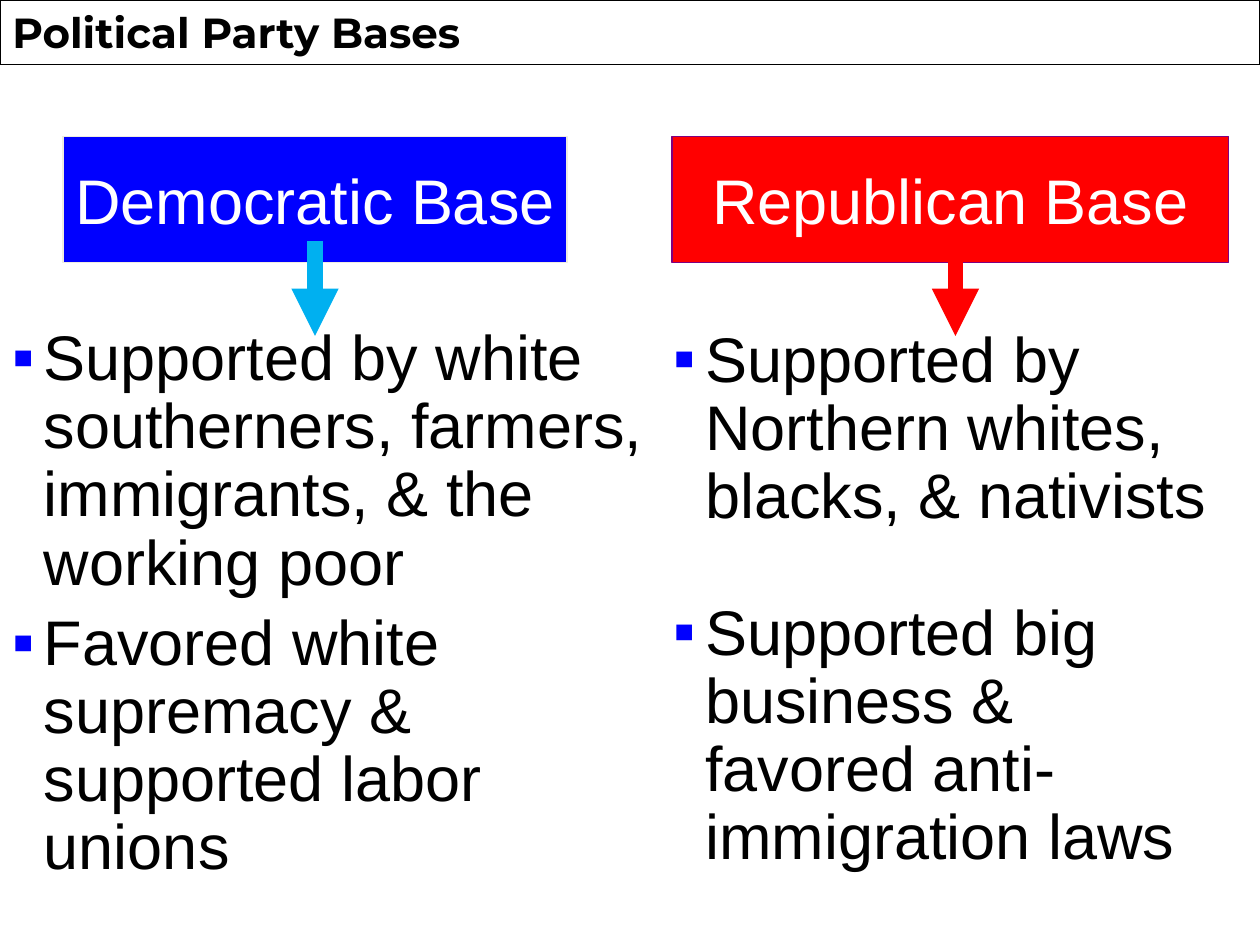
"""Build the slide that compares the bases of two political parties."""
from lxml import etree
from pptx import Presentation
from pptx.dml.color import RGBColor
from pptx.enum.shapes import MSO_CONNECTOR, MSO_SHAPE
from pptx.enum.text import MSO_ANCHOR, MSO_AUTO_SIZE, PP_ALIGN
from pptx.oxml.ns import qn
from pptx.util import Pt

RECT = MSO_SHAPE.RECTANGLE
LINE = MSO_CONNECTOR.STRAIGHT
TOP, MID = MSO_ANCHOR.TOP, MSO_ANCHOR.MIDDLE
LEFT, CENTER = PP_ALIGN.LEFT, PP_ALIGN.CENTER
GROW = MSO_AUTO_SIZE.SHAPE_TO_FIT_TEXT
PX = 9525
THEME = {
    "white": "FFFFFF", "black": "000000", "blue": "0000FF", "red": "FF0000",
    "cream": "EEECE1", "purple": "800080", "sky": "00B0F0",
    "head": {"name": "Montserrat", "size": Pt(24), "bold": True},
    "body": {"name": "Arial", "size": Pt(36)},
}


def write(para, text, style, color, form):
    run = para.add_run()
    run.text = text
    for key, val in THEME[style].items():
        setattr(run.font, key, val)
    run.font.color.rgb = RGBColor.from_string(THEME[color])
    for key, val in form.items():
        setattr(para, key, val)


deck = Presentation()
deck.slide_width, deck.slide_height = 960 * PX, 720 * PX
slide = deck.slides.add_slide(deck.slide_layouts[6])
shapes = slide.shapes

boxes = [
    ("Political Party Bases", (0, 0, 960, 49), "white", "black", "head", "black", TOP, LEFT, True),
    ("Democratic Base", (48, 104, 384, 96), "blue", "cream", "body", "white", MID, CENTER, False),
    ("Republican Base", (512, 104, 424, 96), "red", "purple", "body", "white", MID, CENTER, False),
]
for text, area, fill, edge, style, ink, anchor, align, wrap in boxes:
    box = shapes.add_shape(RECT, *(n * PX for n in area))
    box.shadow.inherit = False
    box.fill.solid()
    box.fill.fore_color.rgb = RGBColor.from_string(THEME[fill])
    box.line.color.rgb = RGBColor.from_string(THEME[edge])
    box.line.width = Pt(0.75)
    frame = box.text_frame
    frame.word_wrap = wrap
    frame.vertical_anchor = anchor
    write(frame.paragraphs[0], text, style, ink, {"alignment": align})

for x, color in ((240, "sky"), (728, "red")):
    arrow = shapes.add_connector(LINE, x * PX, 184 * PX, x * PX, 256 * PX)
    arrow.line.color.rgb = RGBColor.from_string(THEME[color])
    arrow.line.width = Pt(9)
    etree.SubElement(arrow.line._get_or_add_ln(), qn("a:tailEnd"), type="triangle")
    etree.SubElement(arrow._element.spPr, qn("a:effectLst"))

lists = [
    ((0, 244, 504, 436), [
        ("Supported by white southerners, farmers, immigrants, & the working poor", 7.2),
        ("Favored white supremacy & supported labor unions", 7.2),
    ]),
    ((504, 245, 432, 428), [
        ("Supported by Northern whites, blacks, & nativists", 7.2),
        ("Supported big business & favored anti-immigration laws", 39.4),
    ]),
]
for area, points in lists:
    frame = shapes.add_textbox(*(n * PX for n in area)).text_frame
    frame.word_wrap = True
    frame.auto_size = GROW
    for i, (text, gap) in enumerate(points):
        para = frame.add_paragraph() if i else frame.paragraphs[0]
        write(para, text, "body", "black", {"line_spacing": 0.9, "space_before": Pt(gap)})
        props = para._p.get_or_add_pPr()
        props.set("marL", str(24 * PX))
        props.set("indent", str(-24 * PX))
        tint = etree.SubElement(props, qn("a:buClr"))
        etree.SubElement(tint, qn("a:srgbClr"), val=THEME["blue"])
        etree.SubElement(props, qn("a:buFont"), typeface=THEME["body"]["name"])
        etree.SubElement(props, qn("a:buChar"), char="▪")

deck.save("out.pptx")
